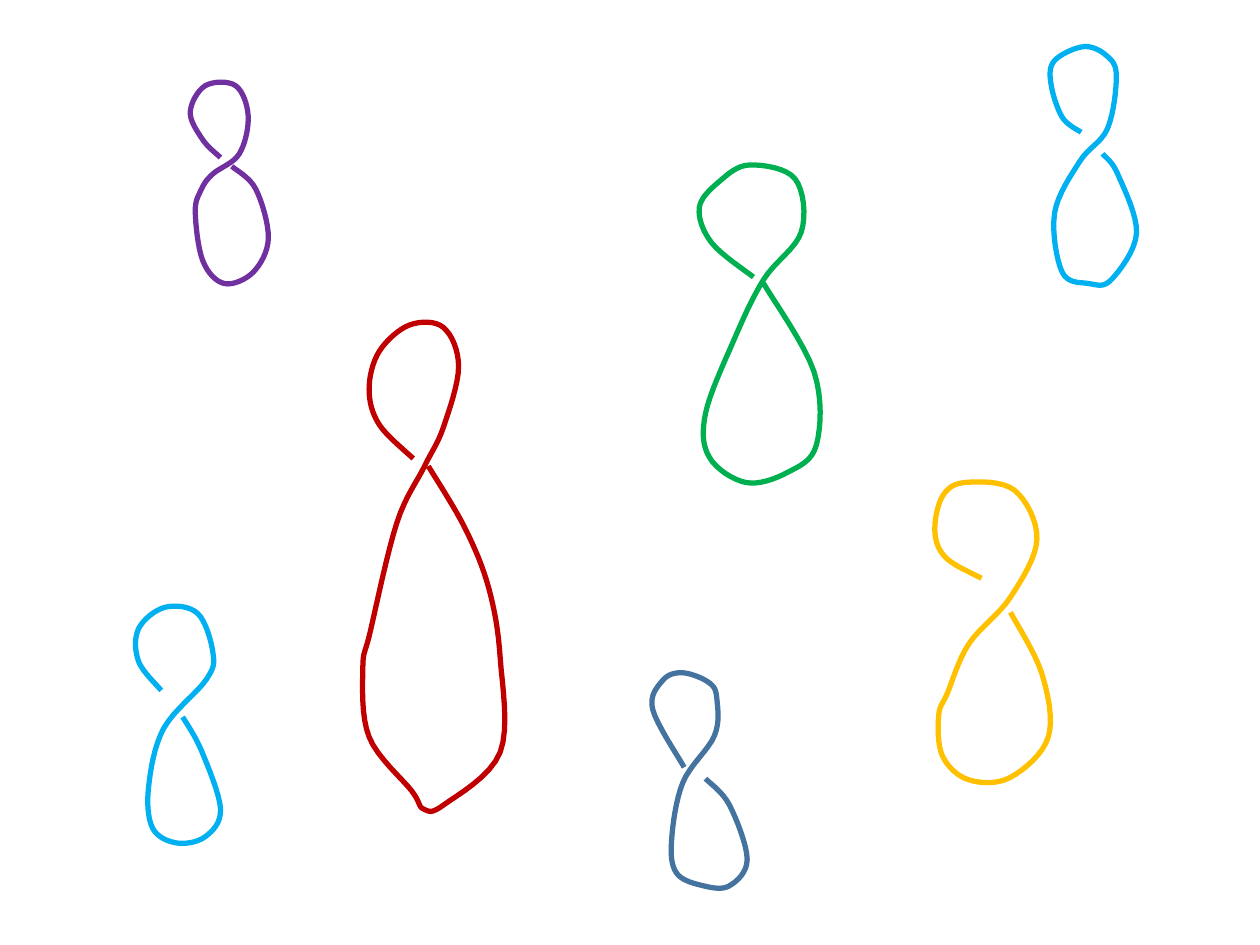
from pptx import Presentation
from pptx.dml.color import RGBColor as RGB
from pptx.util import Cm, Pt

PURPLE = RGB(0x70, 0x30, 0xA0)
RED = RGB(0xC0, 0x00, 0x00)
GREEN = RGB(0x00, 0xB0, 0x50)
STEEL = RGB(0x43, 0x73, 0x9E)
SKY = RGB(0x00, 0xB0, 0xF0)
GOLD = RGB(0xFF, 0xC0, 0x00)

UNIT = Cm(0.0254)  # loop points are in hundredths of an inch
STEPS = 8          # line segments drawn between two points

# Each loop runs from the open end at the neck, round the top, then the bottom.
LOOPS = [
    (PURPLE, [
        (175, 125), (161, 111), (151, 89), (163, 68), (187, 68), (197, 92),
        (190, 122), (169, 138), (160, 150), (155, 168), (161, 207),
        (178, 225), (201, 216), (213, 189), (203, 150), (184, 132)]),
    (RED, [
        (328, 364), (301, 337), (293, 309), (301, 279), (325, 258), (352, 260),
        (364, 291), (352, 339), (337, 370), (315, 415), (294, 501), (288, 530),
        (293, 585), (327, 628), (336, 642), (352, 639), (397, 597),
        (397, 522), (388, 467), (369, 419), (340, 370)]),
    (GREEN, [
        (598, 220), (565, 193), (555, 165), (571, 144), (595, 131), (631, 142),
        (636, 184), (606, 222), (582, 271), (560, 328), (563, 363),
        (592, 383), (625, 375), (648, 353), (646, 295), (606, 225)]),
    (STEEL, [
        (543, 609), (518, 563), (526, 540), (542, 534), (563, 542), (569, 555),
        (567, 584), (542, 621), (533, 667), (537, 693), (558, 703),
        (579, 703), (593, 682), (579, 639), (560, 618)]),
    (SKY, [
        (858, 105), (843, 93), (834, 66), (837, 48), (860, 37), (878, 44),
        (886, 60), (879, 102), (857, 128), (837, 169), (843, 216),
        (864, 225), (882, 222), (902, 185), (887, 138), (875, 122)]),
    (GOLD, [
        (779, 459), (751, 443), (742, 422), (748, 394), (766, 383), (805, 389),
        (823, 428), (802, 474), (769, 511), (752, 550), (745, 568), (748, 600),
        (769, 619), (802, 617), (832, 585), (827, 535), (802, 486)]),
    (SKY, [
        (128, 548), (110, 525), (110, 499), (131, 482), (157, 487),
        (169, 518), (164, 539), (130, 578), (118, 624), (121, 657),
        (140, 669), (163, 664), (175, 642), (160, 596), (145, 569)]),
]


def smooth(points):
    """Return points on a Catmull-Rom curve through the given ones."""
    ends = [points[0], *points, points[-1]]
    curve = [points[0]]
    for quad in zip(ends, ends[1:], ends[2:], ends[3:]):
        for step in range(1, STEPS + 1):
            t = step / STEPS
            curve.append(tuple(
                (2 * b + (c - a) * t + (2 * a - 5 * b + 4 * c - d) * t ** 2
                 + (3 * b - a - 3 * c + d) * t ** 3) / 2
                for a, b, c, d in zip(*quad)))
    return [(x * UNIT, y * UNIT) for x, y in curve]


def draw_loop(slide, color, points):
    first, *rest = smooth(points)
    pen = slide.shapes.build_freeform(*first)
    pen.add_line_segments(rest, close=False)
    loop = pen.convert_to_shape()
    loop.shadow.inherit = False
    loop.fill.background()
    loop.line.color.rgb = color
    loop.line.width = Pt(3)


def main():
    deck = Presentation()
    deck.slide_width, deck.slide_height = Cm(25.4), Cm(19.05)
    slide = deck.slides.add_slide(deck.slide_layouts[6])
    for color, points in LOOPS:
        draw_loop(slide, color, points)
    deck.save("out.pptx")


if __name__ == "__main__":
    main()
